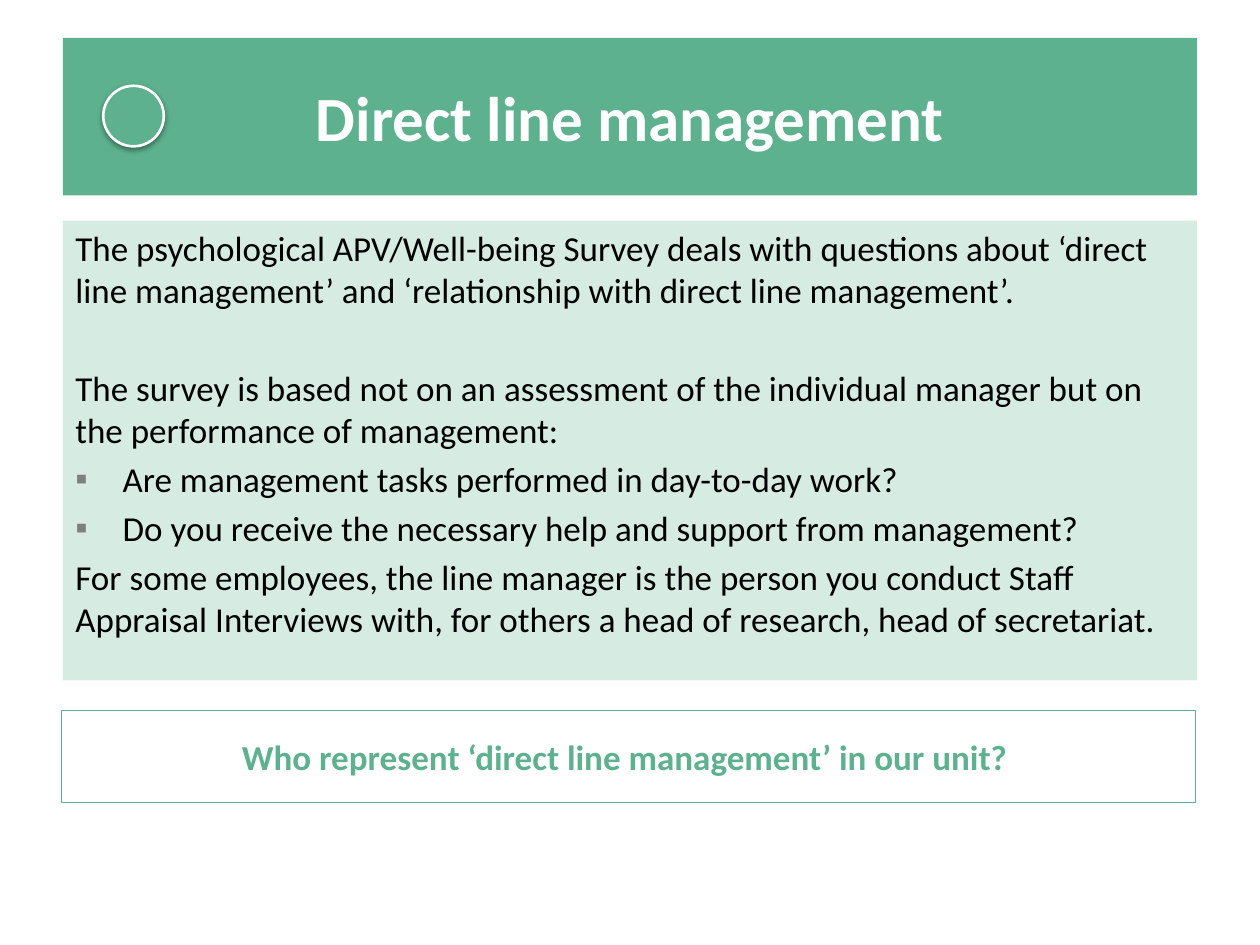
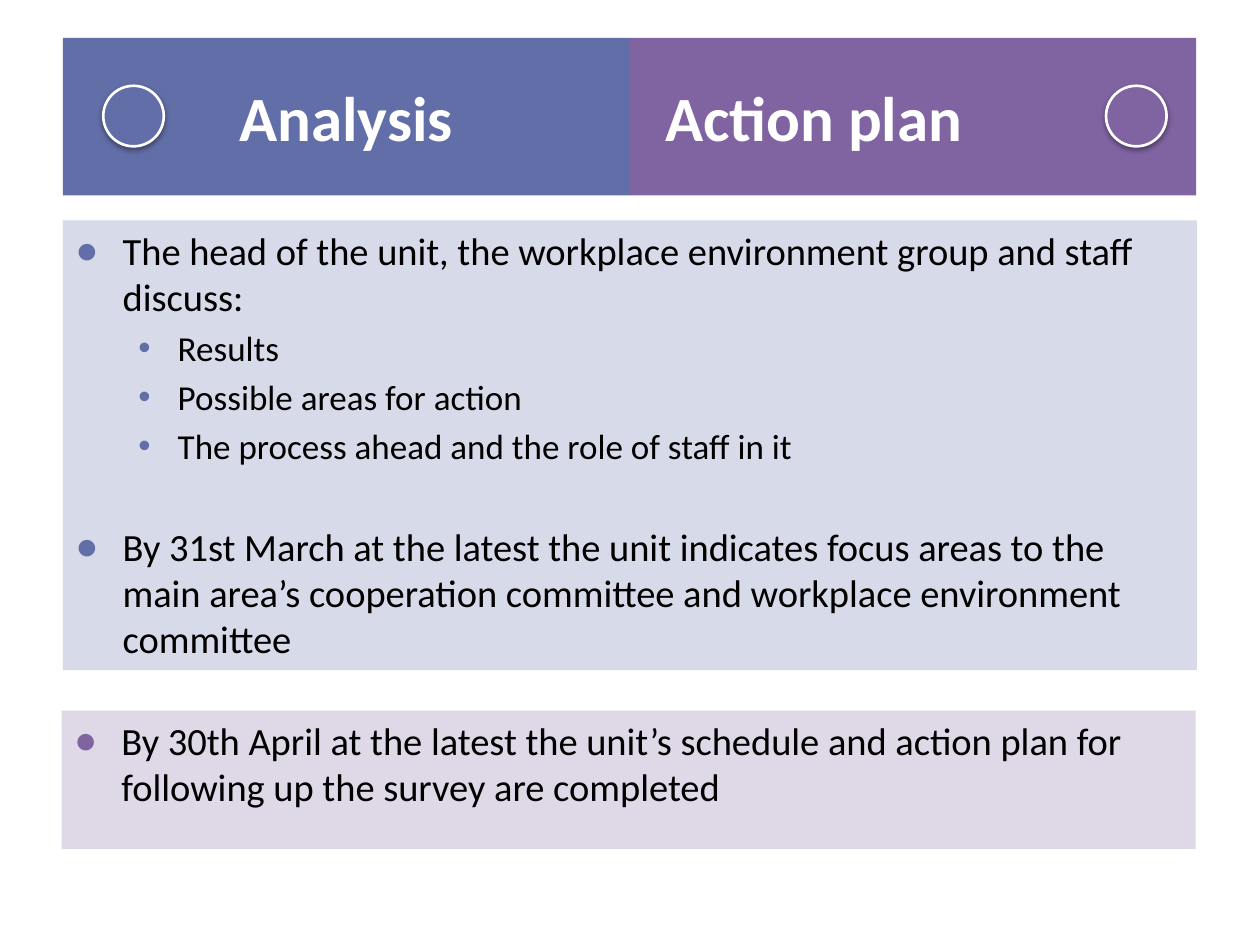
from dataclasses import dataclass

from lxml import etree
from pptx import Presentation
from pptx.dml.color import RGBColor
from pptx.enum.shapes import MSO_SHAPE
from pptx.enum.text import MSO_ANCHOR, PP_ALIGN
from pptx.oxml.ns import qn
from pptx.util import Pt

RECTANGLE, OVAL = MSO_SHAPE.RECTANGLE, MSO_SHAPE.OVAL
TOP, MIDDLE = MSO_ANCHOR.TOP, MSO_ANCHOR.MIDDLE
LEFT, CENTER = PP_ALIGN.LEFT, PP_ALIGN.CENTER

COLOURS = {
    "management": "5DB18E",
    "analysis": "626EA7",
    "action": "8064A2",
    "white": "FFFFFF",
    "black": "000000",
    "grey": "7F7F7F",
}
FONT = "Calibri"
BAND_LEFT, BAND_TOP, BAND_WIDTH, BAND_HEIGHT = 36, 21.6, 648, 90
HALF_WIDTH = BAND_WIDTH / 2 - 0.5
BODY_TOP = 126
CLOSING_LEFT, CLOSING_TOP = 35.3, 406.1
RING_TOP, RING_SIZE = 49, 34.6
RING_LEFT, RING_RIGHT = 59, 632
BLANK_LINE = 28


@dataclass
class Line:
    text: str
    size: int = 20
    colour: str = "black"
    bold: bool = False
    align: int = LEFT
    bullet: str = ""
    bullet_colour: str = "grey"
    level: int = 0
    margin: float = 0
    hanging: float = 0
    gap: float = 0


def main_point(text, colour, gap=0):
    return Line(text, 22, bullet="●", bullet_colour=colour,
                margin=27, hanging=27, gap=gap)


def sub_point(text, colour):
    return Line(text, bullet="•", bullet_colour=colour, level=1,
                margin=58.5, hanging=22.5)


def question(text):
    return Line(text, bullet="▪", margin=27, hanging=27)


def rgb(name):
    return RGBColor.from_string(COLOURS[name])


def add_panel(slide, kind, left, top, width, height, fill=None, tint=False,
              outline=None, outline_width=0.75):
    panel = slide.shapes.add_shape(kind, Pt(left), Pt(top), Pt(width), Pt(height))
    panel.shadow.inherit = False
    if fill:
        panel.fill.solid()
        panel.fill.fore_color.rgb = rgb(fill)
        if tint:
            tone = panel.fill._xPr.find(".//" + qn("a:srgbClr"))
            etree.SubElement(tone, qn("a:alpha"), val="25000")
    else:
        panel.fill.background()
    if outline:
        panel.line.color.rgb = rgb(outline)
        panel.line.width = Pt(outline_width)
    else:
        panel.line.fill.background()
    return panel


def add_bullet(paragraph, line):
    properties = paragraph._p.get_or_add_pPr()
    properties.set("marL", str(Pt(line.margin)))
    properties.set("indent", str(-Pt(line.hanging)))
    if line.bullet:
        tone = etree.SubElement(properties, qn("a:buClr"))
        etree.SubElement(tone, qn("a:srgbClr"), val=COLOURS[line.bullet_colour])
        etree.SubElement(properties, qn("a:buFont"), typeface="Arial")
        etree.SubElement(properties, qn("a:buChar"), char=line.bullet)


def write_lines(panel, lines, anchor=TOP):
    frame = panel.text_frame
    frame.word_wrap = True
    frame.vertical_anchor = anchor
    for index, line in enumerate(lines):
        paragraph = frame.add_paragraph() if index else frame.paragraphs[0]
        add_bullet(paragraph, line)
        paragraph.level = line.level
        paragraph.alignment = line.align
        if index:
            paragraph.space_before = Pt(line.size * 0.2 + line.gap)
        run = paragraph.add_run()
        run.text = line.text
        run.font.name = FONT
        run.font.size = Pt(line.size)
        run.font.bold = line.bold
        run.font.color.rgb = rgb(line.colour)


def add_title(slide, text, fill, left=BAND_LEFT, width=BAND_WIDTH,
              align=CENTER, margin=0):
    band = add_panel(slide, RECTANGLE, left, BAND_TOP, width, BAND_HEIGHT, fill)
    write_lines(band, [Line(text, 36, "white", True, align, margin=margin)], MIDDLE)


def add_ring(slide, left, fill):
    ring = add_panel(slide, OVAL, left, RING_TOP, RING_SIZE, RING_SIZE, fill,
                     outline="white", outline_width=1.5)
    effects = ring._element.spPr.find(qn("a:effectLst"))
    shadow = etree.SubElement(effects, qn("a:outerShdw"), blurRad=str(Pt(3.1)),
                              dist=str(Pt(1.6)), dir="5400000", rotWithShape="0")
    tone = etree.SubElement(shadow, qn("a:srgbClr"), val=COLOURS["black"])
    etree.SubElement(tone, qn("a:alpha"), val="38000")


def add_body(slide, lines, fill, height, left=BAND_LEFT, top=BODY_TOP):
    body = add_panel(slide, RECTANGLE, left, top, BAND_WIDTH, height, fill, tint=True)
    write_lines(body, lines)


def build_management(slide):
    theme = "management"
    add_title(slide, "Direct line management", theme)
    add_body(slide, [
        Line("The psychological APV/Well-being Survey deals with questions about "
             "‘direct line management’ and ‘relationship with direct line management’."),
        Line("The survey is based not on an assessment of the individual manager "
             "but on the performance of management:", gap=BLANK_LINE),
        question("Are management tasks performed in day-to-day work?"),
        question("Do you receive the necessary help and support from management?"),
        Line("For some employees, the line manager is the person you conduct Staff "
             "Appraisal Interviews with, for others a head of research, "
             "head of secretariat."),
    ], theme, 262.8)
    discussion = add_panel(slide, RECTANGLE, CLOSING_LEFT, CLOSING_TOP,
                           BAND_WIDTH, 52.6, outline=theme)
    write_lines(discussion, [Line("Who represent ‘direct line management’ in our unit? ",
                                  colour=theme, bold=True, align=CENTER)], MIDDLE)
    add_ring(slide, RING_LEFT, theme)


def build_analysis_and_action(slide):
    first, second = "analysis", "action"
    add_title(slide, "Analysis", first, width=HALF_WIDTH)
    add_title(slide, "Action plan", second, BAND_LEFT + HALF_WIDTH, HALF_WIDTH + 0.5,
              LEFT, margin=13.5)
    add_body(slide, [
        main_point("The head of the unit, the workplace environment group and staff "
                   "discuss:", first),
        sub_point("Results", first),
        sub_point("Possible areas for action", first),
        sub_point("The process ahead and the role of staff in it", first),
        main_point("By 31st March at the latest the unit indicates focus areas to the "
                   "main area’s cooperation committee and workplace environment "
                   "committee", first, BLANK_LINE),
    ], first, 257)
    add_body(slide, [
        main_point("By 30th April at the latest the unit’s schedule and action plan for "
                   "following up the survey are completed", second),
    ], second, 79.2, CLOSING_LEFT, CLOSING_TOP)
    add_ring(slide, RING_LEFT, first)
    add_ring(slide, RING_RIGHT, second)


def main():
    deck = Presentation()
    deck.slide_width, deck.slide_height = Pt(720), Pt(540)
    blank = deck.slide_layouts[6]
    for build in (build_management, build_analysis_and_action):
        build(deck.slides.add_slide(blank))
    deck.save("out.pptx")


if __name__ == "__main__":
    main()
